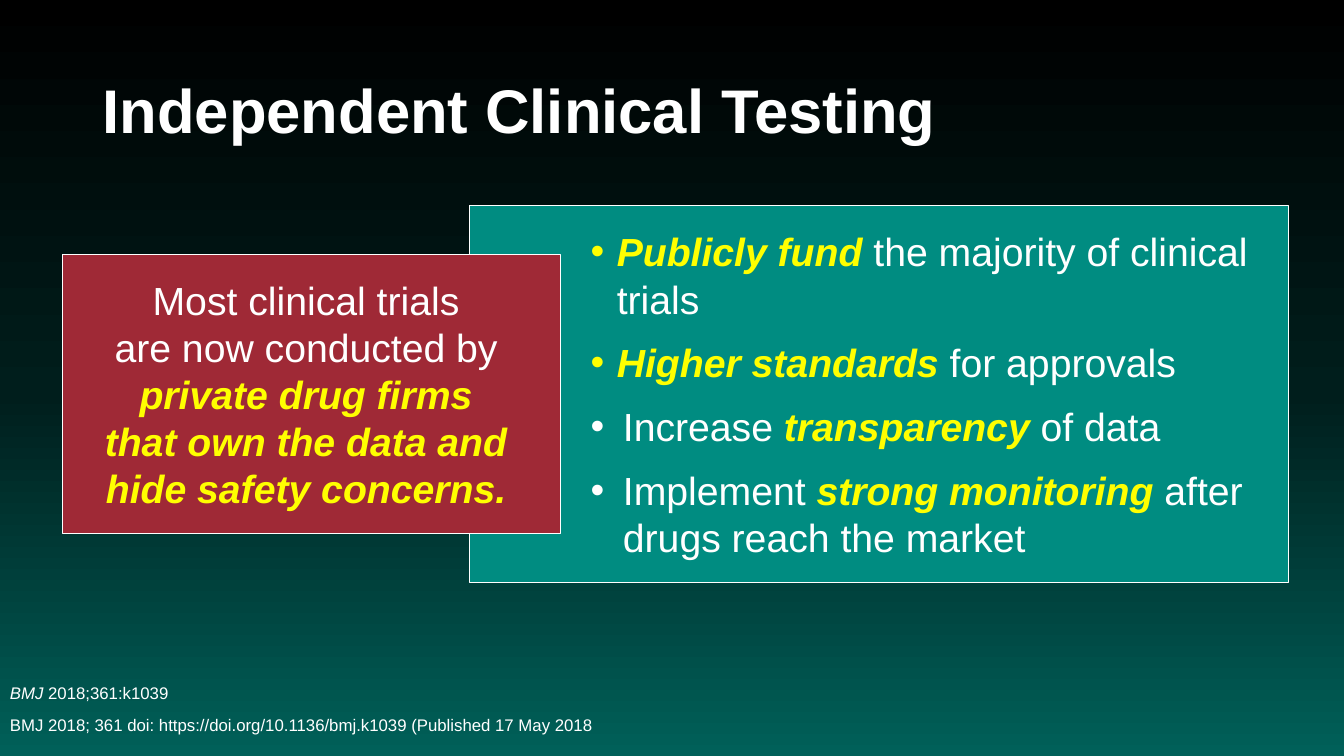
"""Build the slide on independent clinical testing."""
from copy import deepcopy
from dataclasses import dataclass

from lxml import etree
from pptx import Presentation
from pptx.dml.color import RGBColor
from pptx.enum.shapes import MSO_SHAPE
from pptx.enum.text import MSO_ANCHOR, PP_ALIGN
from pptx.oxml.ns import qn
from pptx.util import Pt

RECTANGLE = MSO_SHAPE.RECTANGLE
MIDDLE = MSO_ANCHOR.MIDDLE
LEFT, CENTER = PP_ALIGN.LEFT, PP_ALIGN.CENTER


@dataclass(frozen=True)
class Theme:
    font: str = "Arial"
    white: str = "FFFFFF"
    yellow: str = "FFFF00"
    teal: str = "008C81"
    red: str = "9F2936"
    backdrop: tuple = ((0, "000000"), (0.52, "001E1C"), (1, "006059"))
    title_size: int = 44
    text_size: int = 28
    source_size: int = 12


theme = Theme()


def prepare_frame(box, insets):
    frame = box.text_frame
    frame.word_wrap = True
    frame.vertical_anchor = MIDDLE
    frame.margin_left, frame.margin_top, frame.margin_right, frame.margin_bottom = map(Pt, insets)
    return frame


def add_span(para, text, size, color=theme.white, bold=False, italic=False):
    span = para.add_run()
    span.text = text
    font = span.font
    font.name, font.size = theme.font, Pt(size)
    font.bold, font.italic = bold, italic
    font.color.rgb = RGBColor.from_string(color)


deck = Presentation()
deck.slide_width, deck.slide_height = Pt(960), Pt(540)
page = deck.slides.add_slide(deck.slide_layouts[6])

backdrop = page.background.fill
backdrop.gradient()
backdrop.gradient_angle = 270
stop_list = next(page.element.iter(qn("a:gsLst")))
stop_list.append(deepcopy(stop_list[-1]))
for stop, (position, color) in zip(backdrop.gradient_stops, theme.backdrop):
    stop.position = position
    stop.color.rgb = RGBColor.from_string(color)

title_box = page.shapes.add_textbox(Pt(66.24), Pt(28.8), Pt(828), Pt(104.4))
title_para = prepare_frame(title_box, (7.2, 3.6, 7.2, 3.6)).paragraphs[0]
title_para.line_spacing = 0.9
add_span(title_para, "Independent Clinical Testing", theme.title_size, bold=True)

sources = [
    [("BMJ", True), (" 2018;361:k1039", False)],
    [("BMJ 2018; 361 doi: https://doi.org/10.1136/bmj.k1039 (Published 17 May 2018", False)],
]
source_box = page.shapes.add_textbox(Pt(0), Pt(473.76), Pt(648), Pt(66.24))
source_frame = prepare_frame(source_box, (7.2, 3.6, 7.2, 3.6))
for index, spans in enumerate(sources):
    para = source_frame.add_paragraph() if index else source_frame.paragraphs[0]
    para.line_spacing = 0.9
    if index:
        para.space_before = Pt(10)
    for text, italic in spans:
        add_span(para, text, theme.source_size, italic=italic)

proposals = [
    (18.72, [("Publicly fund ", True), ("the majority of clinical trials", False)]),
    (18.72, [("Higher standards ", True), ("for approvals", False)]),
    (23.04, [("Increase ", False), ("transparency", True), (" of data", False)]),
    (23.04, [("Implement ", False), ("strong monitoring ", True),
             ("after drugs reach the market", False)]),
]
concerns = [
    (0, [("Most clinical trials ", False)]),
    (0, [("are now conducted by ", False)]),
    (0, [("private drug firms ", True)]),
    (0, [("that own the data and ", True)]),
    (0, [("hide safety concerns. ", True)]),
]
panels = [
    ((335.52, 146.88, 584.64, 269.28), theme.teal, 86.4, LEFT, 12, proposals),
    ((44.64, 182.16, 355.68, 198.72), theme.red, 14.4, CENTER, 0, concerns),
]
for bounds, color, left_inset, alignment, gap, lines in panels:
    panel = page.shapes.add_shape(RECTANGLE, *map(Pt, bounds))
    panel.shadow.inherit = False
    panel.fill.solid()
    panel.fill.fore_color.rgb = RGBColor.from_string(color)
    panel.line.color.rgb = RGBColor.from_string(theme.white)
    panel.line.width = Pt(0.75)
    frame = prepare_frame(panel, (left_inset, 14.4, 14.4, 14.4))
    for index, (indent, spans) in enumerate(lines):
        para = frame.add_paragraph() if index else frame.paragraphs[0]
        para.alignment = alignment
        para.space_after = Pt(gap)
        if indent:
            properties = para._p.get_or_add_pPr()
            properties.set("marL", str(Pt(indent)))
            properties.set("indent", str(-Pt(indent)))
            etree.SubElement(properties, qn("a:buFont"), typeface=theme.font)
            etree.SubElement(properties, qn("a:buChar"), char="•")
        for text, stressed in spans:
            span_color = theme.yellow if stressed else theme.white
            add_span(para, text, theme.text_size, span_color, stressed, stressed)

deck.save("out.pptx")
